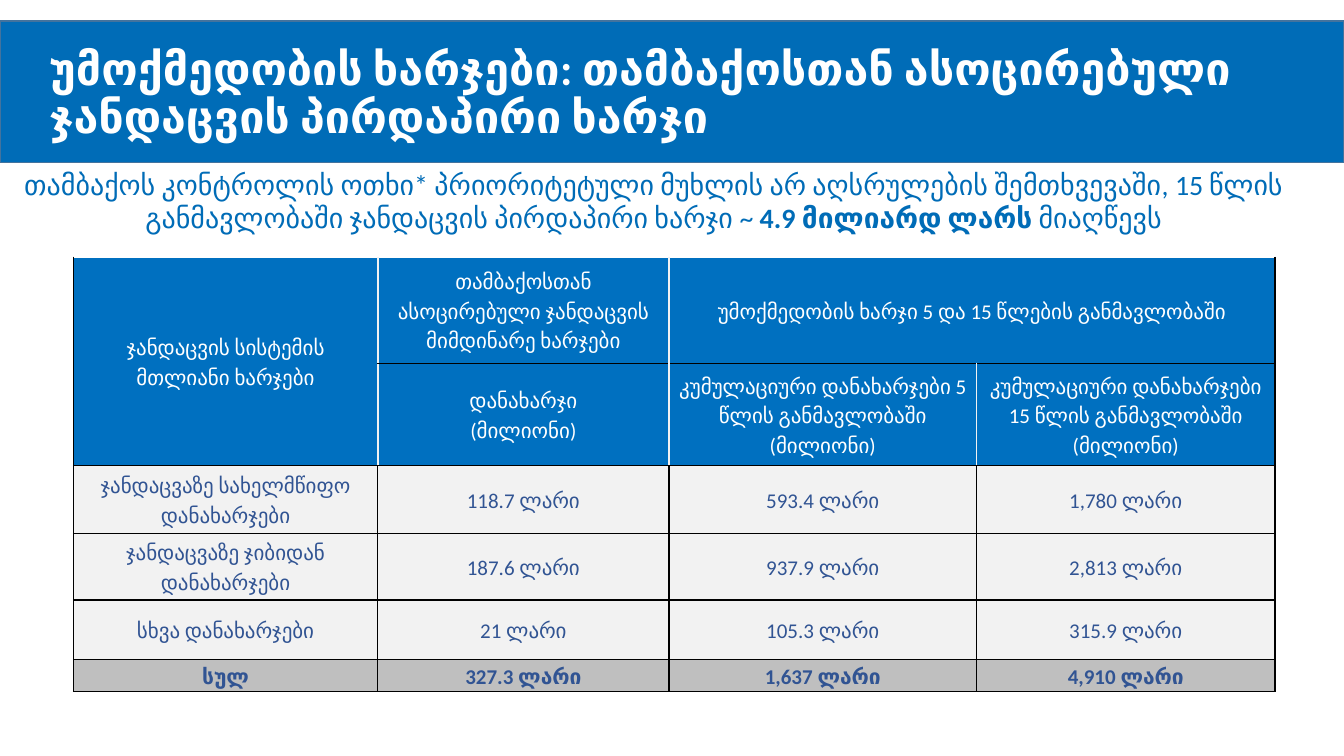
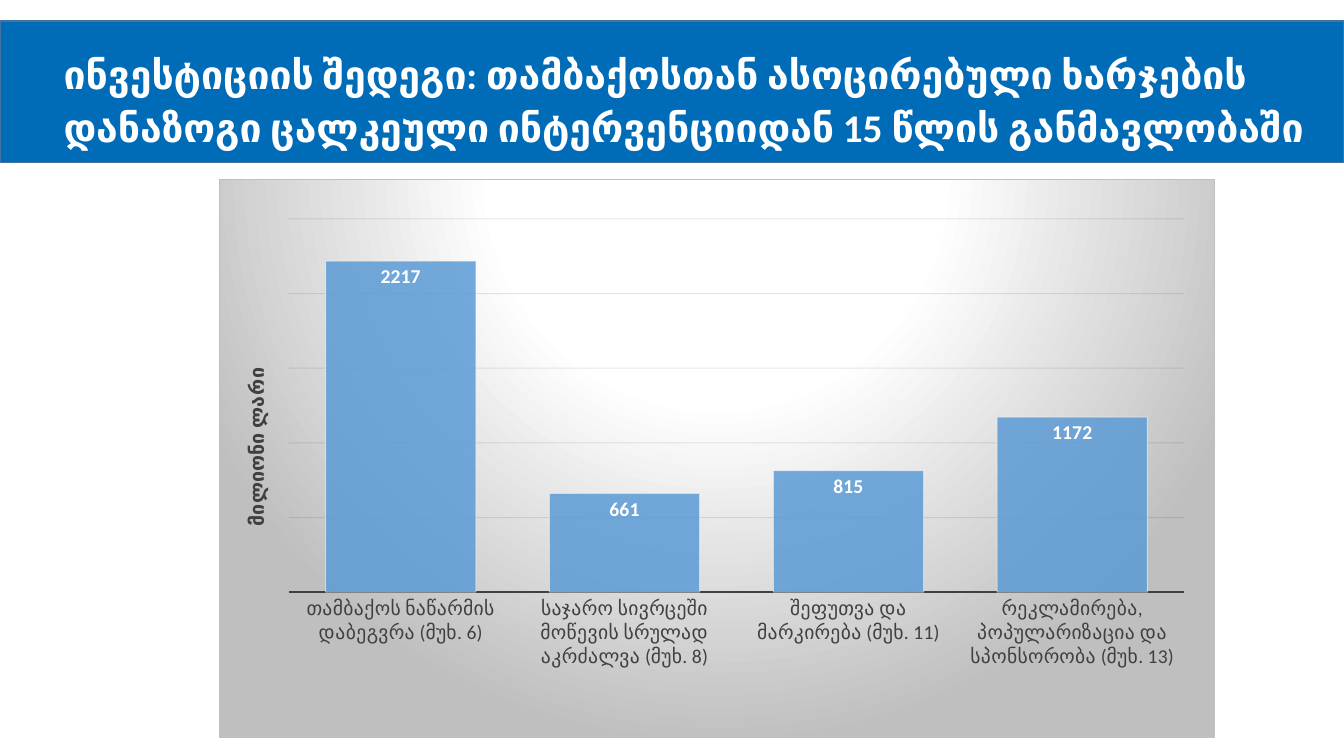
from pptx import Presentation
from pptx import util as u
from pptx.chart import data as cd
from pptx.dml.color import RGBColor
from pptx.enum import chart as ch, shapes, text
from pptx.oxml import ns, parse_xml

# Shared look
FONT = "Calibri"
BLUE = RGBColor(0x00, 0x6C, 0xB7)
EDGE = RGBColor(0x43, 0x73, 0x9E)
HEAD = RGBColor(0x00, 0x70, 0xC0)
NAVY = RGBColor(0x31, 0x54, 0x93)
PALE = RGBColor(0xF2, 0xF2, 0xF2)
GREY = RGBColor(0xBF, 0xBF, 0xBF)
DARK = RGBColor(0x40, 0x40, 0x40)
GRID = RGBColor(0x0D, 0x0D, 0x0D)
BAR = RGBColor(0x5B, 0x9B, 0xD5)
WHITE = RGBColor(0xFF, 0xFF, 0xFF)
BLACK = RGBColor(0, 0, 0)
WIDE, HIGH = u.Cm(33.87), u.Cm(19.05)

# Content: title text, box in cm, size, line spacing
COST = ("უმოქმედობის ხარჯები: თამბაქოსთან ასოცირებული ჯანდაცვის პირდაპირი ხარჯი",
        (0.99, 0.86, 32.21, 3.07), 32, 0.9)
GAIN = ("ინვესტიციის შედეგი: თამბაქოსთან ასოცირებული ხარჯების დანაზოგი "
        "ცალკეული ინტერვენციიდან 15 წლის განმავლობაში",
        (1.35, 0.91, 32.54, 3.07), 28, 1.14)
LEAD = [("თამბაქოს კონტროლის ოთხი* პრიორიტეტული მუხლის არ აღსრულების შემთხვევაში, "
         "15 წლის განმავლობაში ჯანდაცვის პირდაპირი ხარჯი ~ ", False),
        ("4.9 მილიარდ ლარს", True), (" მიაღწევს", False)]
ROWS = [
    ("ჯანდაცვის სისტემის მთლიანი ხარჯები",
     "თამბაქოსთან ასოცირებული ჯანდაცვის მიმდინარე ხარჯები",
     "უმოქმედობის ხარჯი 5 და 15 წლების განმავლობაში", ""),
    ("", "დანახარჯი\v(მილიონი)",
     "კუმულაციური დანახარჯები 5 წლის განმავლობაში (მილიონი)",
     "კუმულაციური დანახარჯები 15 წლის განმავლობაში (მილიონი)"),
    ("ჯანდაცვაზე სახელმწიფო დანახარჯები", "118.7 ლარი", "593.4 ლარი", "1,780 ლარი"),
    ("ჯანდაცვაზე ჯიბიდან დანახარჯები", "187.6 ლარი", "937.9 ლარი", "2,813 ლარი"),
    ("სხვა დანახარჯები", "21 ლარი", "105.3 ლარი", "315.9 ლარი"),
    ("სულ", "327.3 ლარი", "1,637 ლარი", "4,910 ლარი"),
]
COLS = (7.67, 7.34, 7.75, 7.52)
TALL = (2.67, 2.59, 1.7, 1.68, 1.5, 0.81)
SAVED = {
    "თამბაქოს ნაწარმის დაბეგვრა (მუხ. 6)": 2217,
    "საჯარო სივრცეში მოწევის სრულად აკრძალვა (მუხ. 8)": 661,
    "შეფუთვა და მარკირება (მუხ. 11)": 815,
    "რეკლამირება, პოპულარიზაცია და სპონსორობა (მუხ. 13)": 1172,
}
UNIT = "მილიონი ლარი"


def style(font, size, color, bold=False):
    font.name, font.size, font.bold = FONT, u.Pt(size), bold
    font.color.rgb = color


def add_slide(deck, head):
    words, box, size, gap = head
    slide = deck.slides.add_slide(deck.slide_layouts[5])
    title = slide.shapes.title
    title.left, title.top, title.width, title.height = map(u.Cm, box)
    frame = title.text_frame
    frame.text = words
    frame.auto_size = text.MSO_AUTO_SIZE.NONE
    frame.vertical_anchor = text.MSO_ANCHOR.MIDDLE
    para = frame.paragraphs[0]
    para.alignment, para.line_spacing = text.PP_ALIGN.LEFT, gap
    style(para.runs[0].font, size, WHITE, True)
    return slide


def add_band(slide):
    """Draw the blue band and move it to the layout, behind the titles."""
    band = slide.shapes.add_shape(shapes.MSO_SHAPE.RECTANGLE, 0, u.Cm(0.53), WIDE, u.Cm(3.56))
    band.shadow.inherit = False
    band.fill.solid()
    band.fill.fore_color.rgb = BLUE
    band.line.color.rgb, band.line.width = EDGE, u.Pt(1)
    band.element.nvSpPr.cNvPr.set("id", "20")
    slide.slide_layout.shapes.element.insert(2, band.element)


def add_lead(slide):
    box = slide.shapes.add_textbox(0, u.Cm(4.09), u.Cm(32.94), u.Cm(1.96))
    box.text_frame.word_wrap = True
    para = box.text_frame.paragraphs[0]
    para.alignment = text.PP_ALIGN.CENTER
    for words, bold in LEAD:
        run = para.add_run()
        run.text = words
        style(run.font, 20, BLUE, bold)


def set_edges(cell, edges):
    props = cell._tc.get_or_add_tcPr()
    for spot, (side, color, width) in enumerate(edges):
        props.insert(spot, parse_xml(
            f'<a:{side} {ns.nsdecls("a")} w="{u.Pt(width)}"><a:solidFill>'
            f'<a:srgbClr val="{color}"/></a:solidFill></a:{side}>'))


def add_costs(slide):
    table = slide.shapes.add_table(len(ROWS), len(COLS), u.Cm(1.85), u.Cm(6.48),
                                   u.Cm(sum(COLS)), u.Cm(sum(TALL))).table
    table.first_row = table.horz_banding = False
    for col, width in zip(table.columns, COLS):
        col.width = u.Cm(width)
    last = len(ROWS) - 1
    for r, row in enumerate(ROWS):
        table.rows[r].height = u.Cm(TALL[r])
        for c, words in enumerate(row):
            cell, top = table.cell(r, c), r < 2
            cell.text = words
            cell.vertical_anchor = text.MSO_ANCHOR.MIDDLE
            cell.fill.solid()
            cell.fill.fore_color.rgb = HEAD if top else GREY if r == last else PALE
            if not top:
                cell.margin_left = cell.margin_right = u.Cm(0.18)
                cell.margin_top = cell.margin_bottom = 0
            para = cell.text_frame.paragraphs[0]
            para.alignment, para.line_spacing = text.PP_ALIGN.CENTER, 1.15
            if r == 1:
                para.space_after = u.Pt(6)
            for run in para.runs:
                style(run.font, 15, WHITE if top else NAVY, r == last)
            # White rules inside the heading, black elsewhere
            inner = 1.5 if r == 0 else 1
            left = (PALE, inner) if top and c > 0 else (BLACK, 1)
            ends = c == 3 or (r == 0 and c == 2)
            right = (PALE, inner) if top and not ends else (BLACK, 1)
            set_edges(cell, [("lnL", *left), ("lnR", *right),
                             ("lnT", WHITE if r == 0 else BLACK, 1), ("lnB", BLACK, 1)])
    table.cell(0, 0).merge(table.cell(1, 0))
    table.cell(0, 2).merge(table.cell(0, 3))


def place(part, spot, sizes, inner=False):
    """Give a chart part a fixed place, as shares of the chart."""
    for old in part.findall(ns.qn("c:layout")):
        part.remove(old)
    target = '<c:layoutTarget val="inner"/>' if inner else ""
    modes = "".join(f'<c:{k}Mode val="edge"/>' for k in "xy")
    marks = "".join(f'<c:{k} val="{v}"/>' for k, v in zip("xywh", sizes))
    part.insert(spot, parse_xml(
        f'<c:layout {ns.nsdecls("c")}><c:manualLayout>{target}{modes}{marks}'
        '</c:manualLayout></c:layout>'))


def fade(chart, query, share):
    for color in chart.element.xpath(query):
        color.append(parse_xml(f'<a:alpha {ns.nsdecls("a")} val="{share * 1000}"/>'))


def add_backdrop(chart):
    stops = "".join(f'<a:gs pos="{pos * 1000}"><a:srgbClr val="{color}"/></a:gs>'
                    for pos, color in [(0, WHITE), (39, WHITE), (100, GREY)])
    chart.element.find(ns.qn("c:txPr")).addprevious(parse_xml(
        f'<c:spPr {ns.nsdecls("c", "a")}><a:gradFill><a:gsLst>{stops}</a:gsLst>'
        '<a:path path="circle"><a:fillToRect l="50000" t="-80000" r="50000" b="180000"/>'
        f'</a:path></a:gradFill><a:ln w="{u.Pt(0.75)}"><a:solidFill>'
        f'<a:srgbClr val="{GREY}"/></a:solidFill></a:ln></c:spPr>'))


def add_savings(slide):
    data = cd.CategoryChartData()
    data.categories = list(SAVED)
    data.add_series("Series 1", list(SAVED.values()))
    box = map(u.Cm, (5.51, 4.52, 25.1, 14.07))
    chart = slide.shapes.add_chart(ch.XL_CHART_TYPE.COLUMN_CLUSTERED, *box, data).chart
    chart.has_legend = chart.has_title = False
    style(chart.font, 10, BLACK)

    # Axes
    cats, vals = chart.category_axis, chart.value_axis
    cats.major_tick_mark = ch.XL_TICK_MARK.NONE
    style(cats.tick_labels.font, 14, DARK)
    cats.format.line.color.rgb, cats.format.line.width = DARK, u.Pt(1.5)
    vals.minimum_scale, vals.maximum_scale, vals.major_unit = 0, 2500, 500
    vals.visible = False
    line = vals.major_gridlines.format.line
    line.color.rgb, line.width = GRID, u.Pt(0.75)
    frame = vals.axis_title.text_frame
    frame.text = UNIT
    style(frame.paragraphs[0].runs[0].font, 14, DARK, True)
    title = vals.axis_title.element
    title.find(".//" + ns.qn("a:bodyPr")).set("rot", "-5400000")
    place(title, 1, (0.02, 0.33))

    # Bars and labels
    plot = chart.plots[0]
    plot.gap_width, plot.vary_by_categories = 49, False
    bars = plot.series[0]
    bars.format.fill.solid()
    bars.format.fill.fore_color.rgb = BAR
    bars.format.line.color.rgb, bars.format.line.width = WHITE, u.Pt(0.75)
    labels = bars.data_labels
    labels.show_value = True
    labels.position = ch.XL_LABEL_POSITION.INSIDE_END
    style(labels.font, 14, WHITE, True)

    # Transparency, plot area, backdrop
    fade(chart, "//c:majorGridlines//a:srgbClr", 10)
    fade(chart, "//c:ser/c:spPr/a:solidFill/a:srgbClr", 85)
    fade(chart, "//c:ser/c:spPr/a:ln//a:srgbClr", 50)
    place(chart.element.find(".//" + ns.qn("c:plotArea")), 0, (0.07, 0.07, 0.9, 0.67), True)
    add_backdrop(chart)


def main():
    deck = Presentation()
    deck.slide_width, deck.slide_height = WIDE, HIGH
    cost = add_slide(deck, COST)
    add_band(cost)
    add_lead(cost)
    add_costs(cost)
    add_savings(add_slide(deck, GAIN))
    deck.save("out.pptx")


if __name__ == "__main__":
    main()
